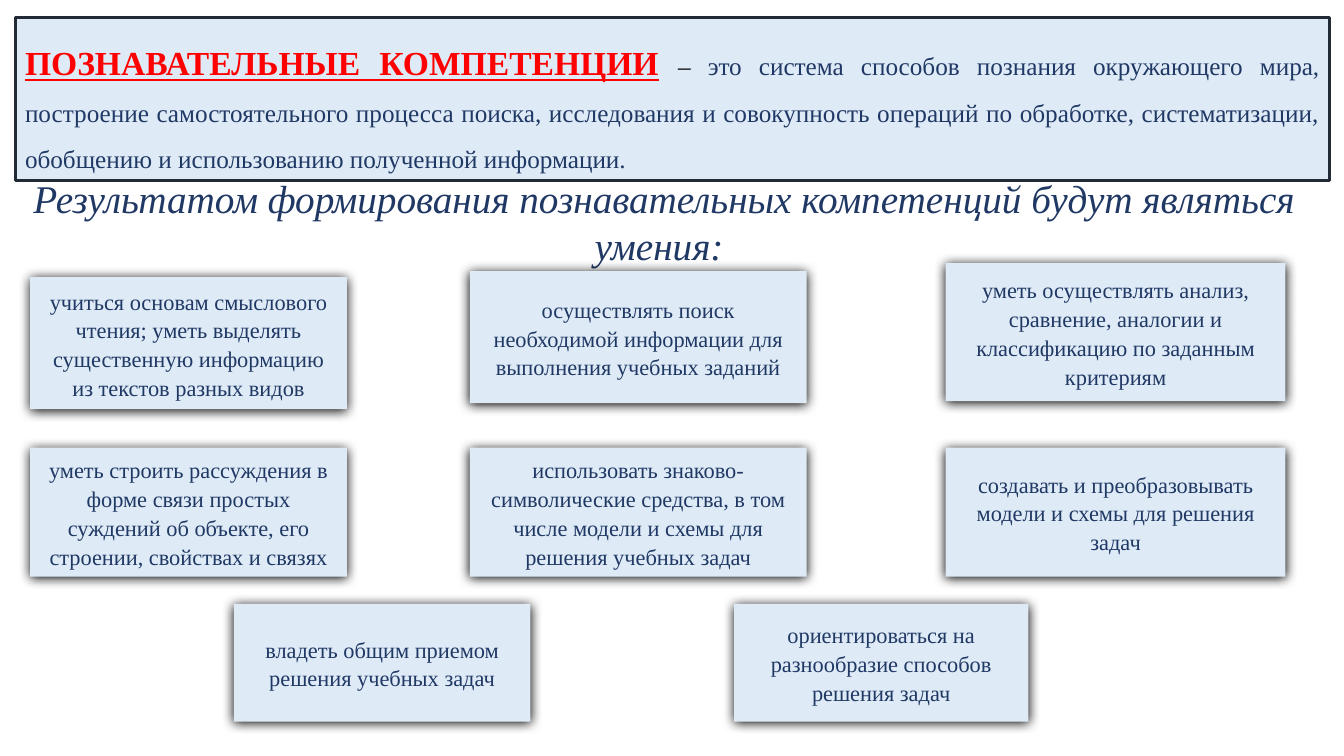
"""Build a slide on cognitive competences and the skills they lead to."""
from lxml.etree import SubElement
from pptx import Presentation
from pptx.dml.color import RGBColor
from pptx.enum.shapes import MSO_SHAPE
from pptx.enum.text import MSO_ANCHOR, MSO_AUTO_SIZE, PP_ALIGN
from pptx.oxml.ns import qn
from pptx.util import Inches, Pt

NAVY = "203864"
PALE_BLUE = "DEEBF7"


def style_span(span, size, color):
    span.font.name = "Times New Roman"
    span.font.size = Pt(size)
    span.font.color.rgb = RGBColor.from_string(color)


def add_panel(page, left, top, width, height):
    panel = page.shapes.add_shape(
        MSO_SHAPE.RECTANGLE, Inches(left), Inches(top), Inches(width), Inches(height)
    )
    panel.shadow.inherit = False
    panel.fill.solid()
    panel.fill.fore_color.rgb = RGBColor.from_string(PALE_BLUE)
    panel.text_frame.word_wrap = True
    return panel


deck = Presentation()
deck.slide_width = Inches(13.33)
deck.slide_height = Inches(7.5)
page = deck.slides.add_slide(deck.slide_layouts[5])

heading = page.shapes.title
heading.left, heading.top = Inches(0.15), Inches(1.68)
heading.width, heading.height = Inches(12.87), Inches(1.38)
heading.text_frame.text = "Результатом формирования познавательных компетенций будут являться умения: "
heading.text_frame.word_wrap = True
heading.text_frame.auto_size = MSO_AUTO_SIZE.NONE
heading.text_frame.vertical_anchor = MSO_ANCHOR.TOP
para = heading.text_frame.paragraphs[0]
para.alignment = PP_ALIGN.CENTER
style_span(para.runs[0], 28, NAVY)
para.runs[0].font.italic = True

definition = add_panel(page, 0.15, 0.17, 13.04, 1.62)
definition.line.color.rgb = RGBColor.from_string("222A35")
definition.line.width = Pt(2.25)
definition.text_frame.auto_size = MSO_AUTO_SIZE.SHAPE_TO_FIT_TEXT
definition.text_frame.vertical_anchor = MSO_ANCHOR.TOP
para = definition.text_frame.paragraphs[0]
para.alignment = PP_ALIGN.JUSTIFY
para.line_spacing = 1.5
definition_parts = [
    ("ПОЗНАВАТЕЛЬНЫЕ КОМПЕТЕНЦИИ", 24, "FF0000"),
    (" ", 24, "000000"),
    ("– ", 18, "000000"),
    ("это система способов познания окружающего мира, построение самостоятельного "
     "процесса поиска, исследования и совокупность операций по обработке, "
     "систематизации, обобщению и использованию полученной информации. ", 18, NAVY),
]
for text, size, color in definition_parts:
    span = para.add_run()
    span.text = text
    style_span(span, size, color)
term = para.runs[0]
term.font.bold = True
term.font.underline = True

skills = [
    (0.3, 2.75, 3.14, 1.31, "учиться основам смыслового чтения; уметь выделять "
     "существенную информацию из текстов разных видов"),
    (4.66, 2.69, 3.34, 1.31, "осуществлять поиск необходимой информации для "
     "выполнения учебных заданий"),
    (9.38, 2.61, 3.37, 1.37, "уметь осуществлять анализ, сравнение, аналогии и "
     "классификацию по заданным критериям"),
    (0.3, 4.44, 3.14, 1.28, "уметь строить рассуждения в форме связи простых "
     "суждений об объекте, его строении, свойствах и связях"),
    (4.66, 4.44, 3.34, 1.28, "использовать знаково-символические средства, в том "
     "числе модели и схемы для решения учебных задач"),
    (9.38, 4.44, 3.37, 1.28, "создавать и преобразовывать модели и схемы для решения задач"),
    (2.32, 5.99, 2.94, 1.17, "владеть общим приемом решения учебных задач"),
    (7.28, 5.99, 2.92, 1.17, "ориентироваться на разнообразие способов решения задач"),
]
for left, top, width, height, text in skills:
    box = add_panel(page, left, top, width, height)
    box.line.fill.background()
    effects = box.element.spPr.find(qn("a:effectLst"))
    shadow = SubElement(
        effects, qn("a:outerShdw"), blurRad=str(Pt(8.5)), dist=str(Pt(1)),
        dir="5400000", algn="ctr", rotWithShape="0",
    )
    SubElement(shadow, qn("a:srgbClr"), val="000000")
    box.text_frame.text = text
    box.text_frame.vertical_anchor = MSO_ANCHOR.MIDDLE
    para = box.text_frame.paragraphs[0]
    para.alignment = PP_ALIGN.CENTER
    para.line_spacing = 1.07
    para.space_after = Pt(8)
    style_span(para.runs[0], 16, NAVY)

deck.save("out.pptx")
